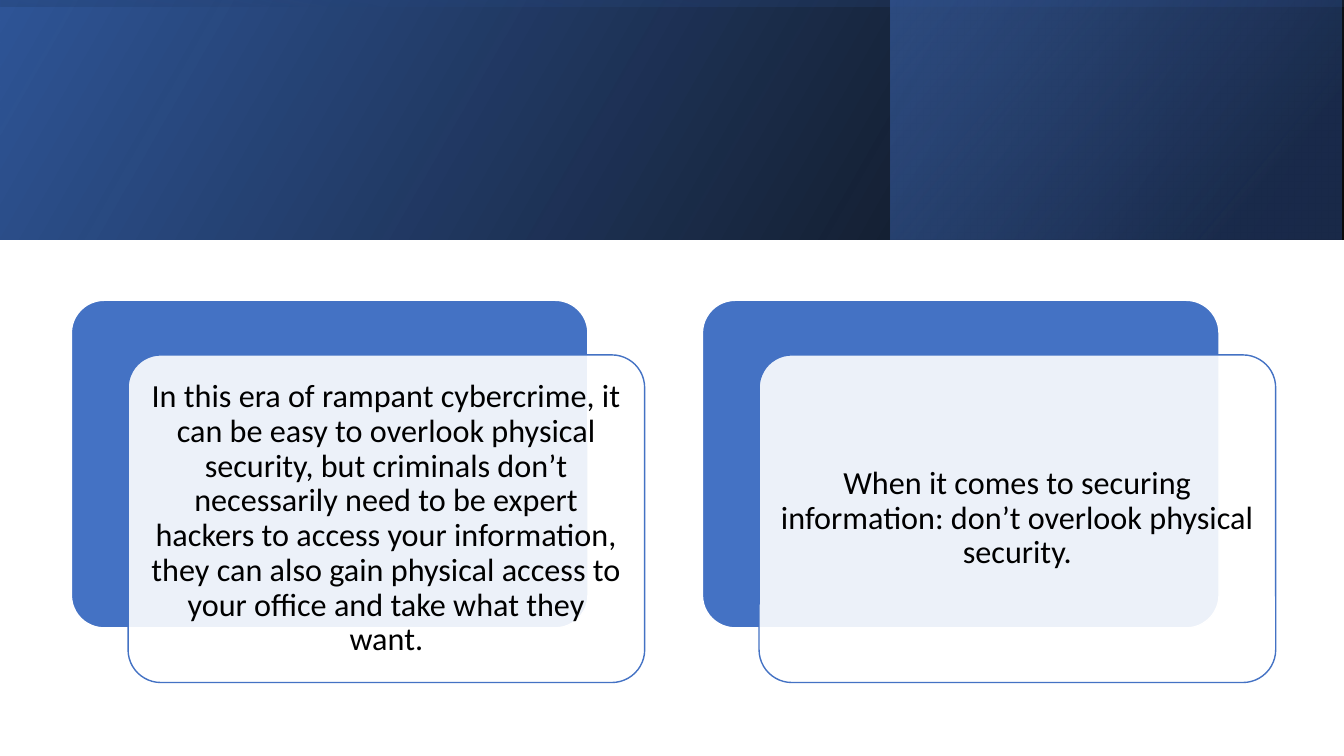
from dataclasses import dataclass

from lxml import etree
from pptx import Presentation
from pptx import util as u
from pptx.dml.color import RGBColor
from pptx.enum import shapes, text
from pptx.oxml import ns

PX = 9525
SLIDE_WIDTH, SLIDE_HEIGHT = 1280, 720


@dataclass(frozen=True)
class Theme:
    blue: str = "4472C4"
    deep_blue: str = "2F5597"
    navy: str = "203864"
    black: str = "000000"
    white: str = "FFFFFF"
    font: str = "Calibri"
    body_size: int = 23
    line_width: int = 1


THEME = Theme()

MESSAGES = [
    "In this era of rampant cybercrime, it can be easy to overlook physical "
    "security, but criminals don’t necessarily need to be expert hackers to "
    "access your information, they can also gain physical access to your "
    "office and take what they want.",
    "When it comes to securing information: don’t overlook physical security.",
]


def emu(*lengths):
    return [u.Emu(round(length * PX)) for length in lengths]


def add_color(parent, color, opacity):
    node = etree.SubElement(parent, ns.qn("a:srgbClr"), val=color)
    etree.SubElement(node, ns.qn("a:alpha"), val=str(opacity * 1000))


def add_gradient_panel(slide, box, stops, angle, rotation=0):
    panel = slide.shapes.add_shape(shapes.MSO_SHAPE.RECTANGLE, *emu(*box))
    panel.shadow.inherit = False
    panel.line.fill.background()
    panel.rotation = rotation
    properties = panel.element.spPr
    properties.find(ns.qn("a:xfrm")).set("flipH", "1")
    gradient = etree.Element(ns.qn("a:gradFill"), rotWithShape="1")
    stop_list = etree.SubElement(gradient, ns.qn("a:gsLst"))
    for position, color, opacity in stops:
        stop = etree.SubElement(stop_list, ns.qn("a:gs"), pos=str(position * 1000))
        add_color(stop, color, opacity)
    etree.SubElement(gradient, ns.qn("a:lin"), ang=str(angle * 60000), scaled="0")
    properties.find(ns.qn("a:prstGeom")).addnext(gradient)


def add_banner(slide, box):
    left, top, width, height = box
    accent_width, accent_margin = 430, 2
    add_gradient_panel(
        slide, box, [(0, THEME.black, 96), (100, THEME.deep_blue, 100)], 330)
    add_gradient_panel(
        slide,
        (left + width - accent_width - accent_margin, top, accent_width, height),
        [(19, THEME.navy, 68), (100, THEME.blue, 48)], 320)
    shift = (width - height) / 2
    add_gradient_panel(
        slide, (left + shift, top - shift, height, width),
        [(23, THEME.deep_blue, 16), (99, THEME.black, 45)], 350, rotation=270)


def add_rounded_panel(group, box, fill, line, opacity=100):
    panel = group.shapes.add_shape(
        shapes.MSO_SHAPE.ROUNDED_RECTANGLE, *emu(*box))
    panel.adjustments[0] = 0.1
    panel.shadow.inherit = False
    panel.fill.solid()
    panel.fill.fore_color.rgb = RGBColor.from_string(fill)
    if opacity < 100:
        color = panel.element.spPr.find(ns.qn("a:solidFill"))[0]
        etree.SubElement(color, ns.qn("a:alpha"), val=str(opacity * 1000))
    panel.line.color.rgb = RGBColor.from_string(line)
    panel.line.width = u.Pt(THEME.line_width)


def add_message(group, box, message):
    frame = group.shapes.add_textbox(*emu(*box)).text_frame
    frame.word_wrap = True
    frame.vertical_anchor = text.MSO_ANCHOR.MIDDLE
    side_margin, end_margin = emu(11, 9)
    frame.margin_left = frame.margin_right = side_margin
    frame.margin_top = frame.margin_bottom = end_margin
    paragraph = frame.paragraphs[0]
    paragraph.alignment = text.PP_ALIGN.CENTER
    paragraph.line_spacing = 0.9
    run = paragraph.add_run()
    run.text = message
    run.font.name = THEME.font
    run.font.size = u.Pt(THEME.body_size)
    run.font.color.rgb = RGBColor.from_string(THEME.black)


def add_card(group, box, message):
    left, top, width, height = box
    offset_x, offset_y, inset = 54, 52, 9
    panel_width, panel_height = width - offset_x, height - offset_y
    front_left, front_top = left + offset_x, top + offset_y
    add_rounded_panel(
        group, (left, top, panel_width, panel_height), THEME.blue, THEME.white)
    add_rounded_panel(
        group, (front_left, front_top, panel_width, panel_height),
        THEME.white, THEME.blue, opacity=90)
    add_message(
        group, (front_left + inset, front_top + inset,
                panel_width - 2 * inset, panel_height - 2 * inset), message)


def add_cards(slide, box, messages):
    left, top, width, height = box
    gap = 55
    card_width = (width - gap * (len(messages) - 1)) / len(messages)
    group = slide.shapes.add_group_shape()
    for index, message in enumerate(messages):
        card_left = left + index * (card_width + gap)
        add_card(group, (card_left, top, card_width, height), message)


def main():
    presentation = Presentation()
    presentation.slide_width, presentation.slide_height = emu(
        SLIDE_WIDTH, SLIDE_HEIGHT)
    slide = presentation.slides.add_slide(presentation.slide_layouts[6])
    add_banner(slide, (0, 0, SLIDE_WIDTH, 228))
    add_cards(slide, (68, 286, 1147, 364), MESSAGES)
    presentation.save("out.pptx")


if __name__ == "__main__":
    main()
